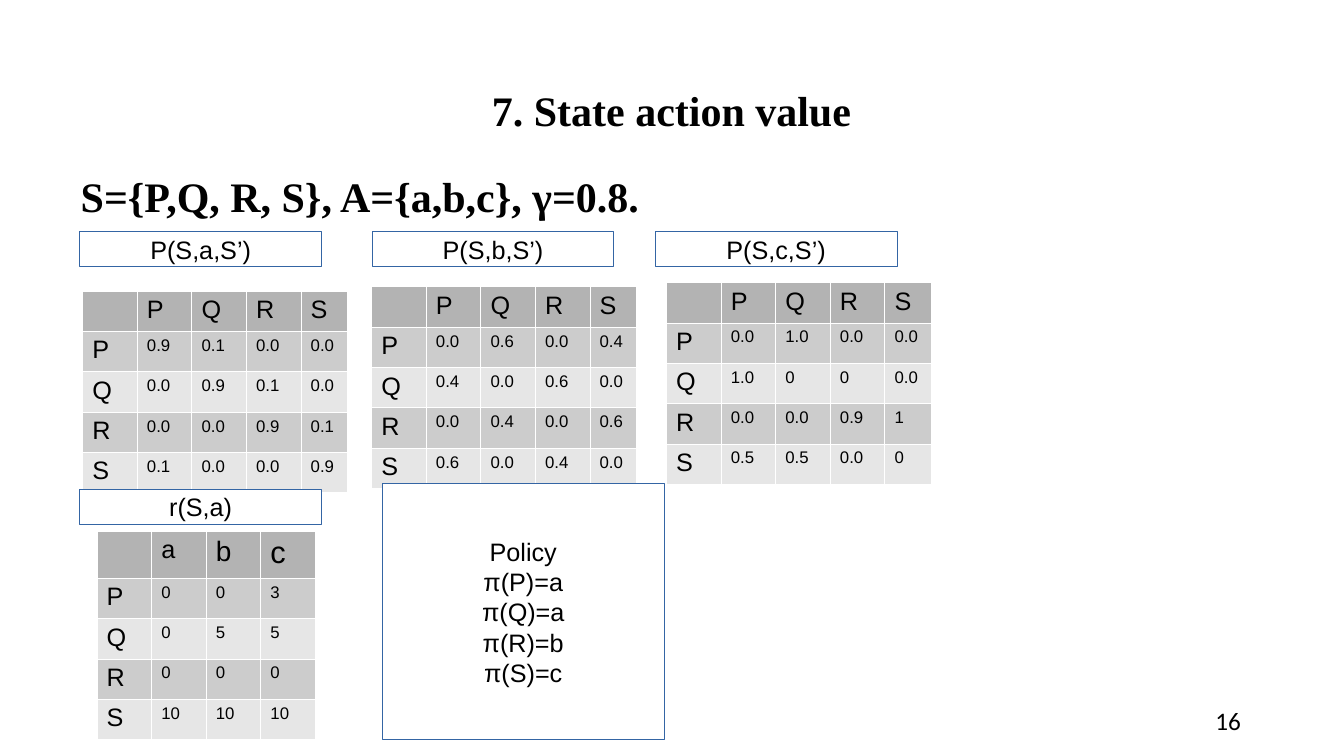
from lxml import etree
from pptx import Presentation
from pptx.dml.color import RGBColor
from pptx.enum.shapes import MSO_SHAPE
from pptx.enum.text import MSO_ANCHOR, MSO_AUTO_SIZE, PP_ALIGN
from pptx.oxml.ns import qn
from pptx.util import Inches, Pt

RECT = MSO_SHAPE.RECTANGLE
LEFT, MID, RIGHT = PP_ALIGN.LEFT, PP_ALIGN.CENTER, PP_ALIGN.RIGHT
TOP, CENTRE = MSO_ANCHOR.TOP, MSO_ANCHOR.MIDDLE
FIXED = MSO_AUTO_SIZE.NONE

HUES = {
    "ink": "000000", "paper": "FFFFFF", "edge": "3465A4",
    "head": "B3B3B3", "odd": "CCCCCC", "even": "E6E6E6",
}
COLS, ROWS = 16, 9


def hue(name):
    return RGBColor.from_string(HUES[name])


def write(frame, text, font="Arial", size=18, bold=False, align=LEFT, space=None, plain=False):
    frame.text = text
    for para in frame.paragraphs:
        if plain:
            props = para._p.get_or_add_pPr()
            props.set("marL", "0")
            props.set("indent", "0")
            etree.SubElement(props, qn("a:buNone"))
        para.alignment = align
        para.space_before = Pt(0)
        if space:
            para.line_spacing = space
        para.font.name = font
        para.font.size = Pt(size)
        para.font.bold = bold
        para.font.color.rgb = hue("ink")


class Board:
    def __init__(self, deck):
        self.wide = deck.slide_width / COLS
        self.high = deck.slide_height / ROWS
        self.slide = deck.slides.add_slide(deck.slide_layouts[1])

    def area(self, x, y, w, h):
        return (round(x * self.wide), round(y * self.high),
                round(w * self.wide), round(h * self.high))

    def holder(self, index, text, box, anchor, **style):
        shape = self.slide.placeholders[index]
        shape.left, shape.top, shape.width, shape.height = self.area(*box)
        frame = shape.text_frame
        frame.auto_size = FIXED
        frame.vertical_anchor = anchor
        write(frame, text, font="Times New Roman", size=30, bold=True, space=0.9, **style)

    def note(self, text, box, **style):
        frame = self.slide.shapes.add_textbox(*self.area(*box)).text_frame
        frame.word_wrap = True
        frame.vertical_anchor = CENTRE
        write(frame, text, **style)

    def panel(self, text, box):
        shape = self.slide.shapes.add_shape(RECT, *self.area(*box))
        shape.shadow.inherit = False
        shape.fill.solid()
        shape.fill.fore_color.rgb = hue("paper")
        shape.line.color.rgb = hue("edge")
        shape.line.width = Pt(0.75)
        shape.text_frame.word_wrap = False
        shape.text_frame.vertical_anchor = CENTRE
        write(shape.text_frame, text, align=MID)

    def cell(self, cell, text, tone, size):
        write(cell.text_frame, text, size=size)
        props = cell._tc.get_or_add_tcPr()
        for side in ("lnL", "lnR", "lnT", "lnB"):
            line = etree.SubElement(props, qn("a:" + side), w="720")
            fill = etree.SubElement(line, qn("a:solidFill"))
            etree.SubElement(fill, qn("a:srgbClr"), val=HUES["paper"])
        cell.fill.solid()
        cell.fill.fore_color.rgb = hue(tone)

    def grid(self, x, y, names, data, widths, first=0.46, sizes=None):
        lines = [["", *names]] + [[state, *row.split()] for state, row in zip("PQRS", data)]
        heights = [first] + [0.46] * len(data)
        box = self.area(x, y, sum(widths), sum(heights))
        table = self.slide.shapes.add_table(len(lines), len(widths), *box).table
        table.first_row = table.horz_banding = False
        for col, width in zip(table.columns, widths):
            col.width = round(width * self.wide)
        for row, height in zip(table.rows, heights):
            row.height = round(height * self.high)
        heads = sizes or [18] * len(widths)
        for r, line in enumerate(lines):
            tone = "head" if r == 0 else "odd" if r % 2 else "even"
            for c, text in enumerate(line):
                size = heads[c] if r == 0 else 12 if c else 18
                self.cell(table.cell(r, c), text, tone, size)


MOVES = [
    ("a", 0.95, 0.98, 3.46,
     ["0.9 0.1 0.0 0.0", "0.0 0.9 0.1 0.0", "0.0 0.0 0.9 0.1", "0.1 0.0 0.0 0.9"]),
    ("b", 4.43, 4.42, 3.41,
     ["0.0 0.6 0.0 0.4", "0.4 0.0 0.6 0.0", "0.0 0.4 0.0 0.6", "0.6 0.0 0.4 0.0"]),
    ("c", 7.8, 7.93, 3.36,
     ["0.0 1.0 0.0 0.0", "1.0 0 0 0.0", "0.0 0.0 0.9 1", "0.5 0.5 0.0 0"]),
]
GAINS = ["0 0 3", "0 5 5", "0 0 0", "10 10 10"]
PLAN = "Policy\nπ(P)=a\nπ(Q)=a\nπ(R)=b\nπ(S)=c"


def main():
    deck = Presentation()
    deck.slide_width, deck.slide_height = Inches(13.33), Inches(7.5)
    board = Board(deck)
    board.holder(0, "7. State action value", (1.1, 0.48, 13.79, 1.73), CENTRE, align=MID)
    board.holder(1, "S={P,Q, R, S}, A={a,b,c}, γ=0.8.", (0.84, 2.04, 13.79, 6.3), TOP, plain=True)
    board.note("16", (11.3, 8.34, 3.59, 0.47), font="Calibri", align=RIGHT)
    for act, left, x, y, data in MOVES:
        board.panel(f"P(S,{act},S’)", (left, 2.76, 2.88, 0.41))
        board.grid(x, y, "PQRS", data, [0.65] * 4 + [0.55])
    board.panel("r(S,a)", (0.95, 5.83, 2.88, 0.41))
    board.grid(1.15, 6.32, "abc", GAINS, [0.65] * 4, first=0.53, sizes=[18, 18, 20, 22])
    board.panel(PLAN, (4.55, 5.76, 3.36, 3.05))
    deck.save("out.pptx")


if __name__ == "__main__":
    main()
